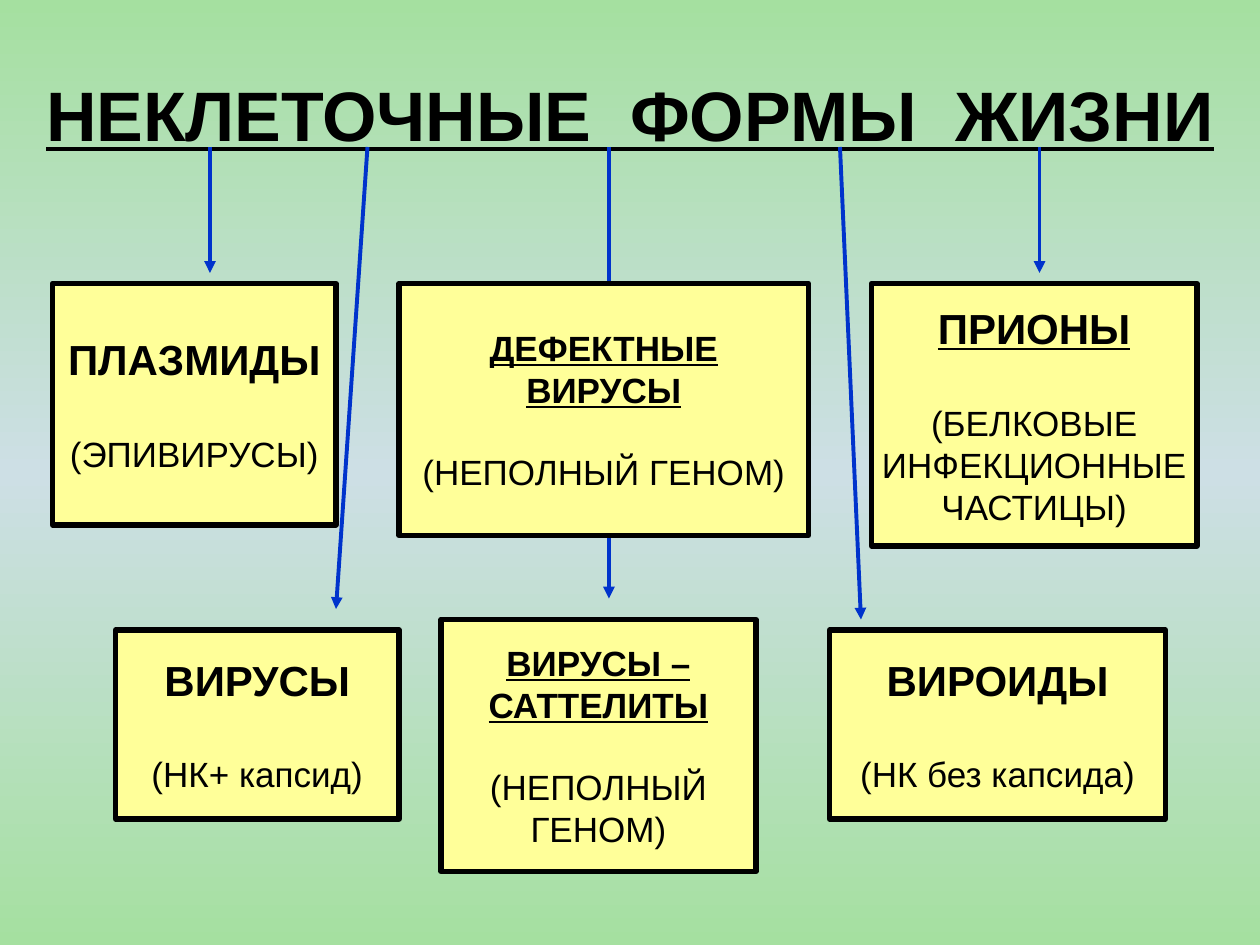
from copy import deepcopy
from typing import NamedTuple

from pptx import Presentation
from pptx.dml.color import RGBColor
from pptx.enum.shapes import MSO_CONNECTOR, MSO_SHAPE
from pptx.enum.text import MSO_ANCHOR, PP_ALIGN
from pptx.oxml.ns import qn
from pptx.oxml.xmlchemy import OxmlElement
from pptx.util import Emu, Pt

PX = 7620  # EMU per px, 120 px to the inch
FONT = "Arial"
BLACK = RGBColor(0x00, 0x00, 0x00)
BLUE = RGBColor(0x00, 0x33, 0xCC)
YELLOW = RGBColor(0xFF, 0xFF, 0x99)
GREEN = RGBColor(0xA5, 0xE0, 0xA0)
PALE_BLUE = RGBColor(0xCD, 0xDF, 0xE5)

ARROW_TOP = 140
NOTE_SIZE = 20


class Box(NamedTuple):
    left: int
    top: int
    width: int
    height: int
    heading: list[str]
    note: list[str]
    size: int = 24
    underline: bool = False


class Arrow(NamedTuple):
    start_x: int
    end_x: int
    end_y: int


BOXES = [
    Box(50, 270, 270, 230, ["ПЛАЗМИДЫ"], ["(ЭПИВИРУСЫ)"]),
    Box(380, 270, 390, 240, ["ДЕФЕКТНЫЕ", "ВИРУСЫ"], ["(НЕПОЛНЫЙ ГЕНОМ)"], 20, True),
    Box(830, 270, 310, 250, ["ПРИОНЫ"],
        ["(БЕЛКОВЫЕ", "ИНФЕКЦИОННЫЕ", "ЧАСТИЦЫ)"], underline=True),
    Box(110, 600, 270, 180, ["ВИРУСЫ"], ["(НК+ капсид)"]),
    Box(420, 590, 300, 240, ["ВИРУСЫ –", "САТТЕЛИТЫ"], ["(НЕПОЛНЫЙ", "ГЕНОМ)"], 20, True),
    Box(790, 600, 320, 180, ["ВИРОИДЫ"], ["(НК без капсида)"]),
]

ARROWS = [
    Arrow(200, 200, 260),
    Arrow(350, 320, 580),
    Arrow(580, 580, 570),
    Arrow(800, 820, 590),
    Arrow(990, 990, 260),
]


def px(*values: int) -> list[Emu]:
    return [Emu(v * PX) for v in values]


def write(p, text: str, *, size: int, bold: bool = False,
          underline: bool = False, before: float = 0) -> None:
    p.alignment = PP_ALIGN.CENTER
    p.space_before = Pt(before)
    r = p.add_run()
    r.text = text
    font = r.font
    font.name, font.size = FONT, Pt(size)
    font.bold, font.underline = bold, underline
    font.color.rgb = BLACK


def paint_background(s) -> None:
    """Fill the slide with a vertical gradient, pale in the middle."""
    fill = s.background.fill
    fill.gradient()
    fill.gradient_angle = 90
    stops = s.element.find(".//" + qn("a:gsLst"))
    stops.append(deepcopy(stops[0]))
    for stop, position, color in zip(
            fill.gradient_stops, (0, 0.5, 1), (GREEN, PALE_BLUE, GREEN)):
        stop.position = position
        stop.color.rgb = color


def draw_title(s, text: str) -> None:
    title = s.shapes.title
    title.left, title.top, title.width, title.height = px(0, 36, 1200, 144)
    tf = title.text_frame
    tf.vertical_anchor = MSO_ANCHOR.MIDDLE
    write(tf.paragraphs[0], text, size=40, bold=True, underline=True)


def draw_arrow(s, arrow: Arrow) -> None:
    line = s.shapes.add_connector(
        MSO_CONNECTOR.STRAIGHT,
        *px(arrow.start_x, ARROW_TOP, arrow.end_x, arrow.end_y))
    line.line.color.rgb = BLUE
    line.line.width = Pt(2.25)
    head = OxmlElement("a:tailEnd")
    head.set("type", "triangle")
    line.line._get_or_add_ln().append(head)
    line._element.spPr.append(OxmlElement("a:effectLst"))


def draw_box(s, box: Box) -> None:
    sp = s.shapes.add_shape(
        MSO_SHAPE.RECTANGLE, *px(box.left, box.top, box.width, box.height))
    sp.shadow.inherit = False
    sp.fill.solid()
    sp.fill.fore_color.rgb = YELLOW
    sp.line.color.rgb = BLACK
    sp.line.width = Pt(3)
    tf = sp.text_frame
    tf.word_wrap = False
    tf.vertical_anchor = MSO_ANCHOR.MIDDLE
    for i, text in enumerate(box.heading):
        p = tf.add_paragraph() if i else tf.paragraphs[0]
        write(p, text, size=box.size, bold=True, underline=box.underline)
    for i, text in enumerate(box.note):
        gap = 0 if i else box.size * 1.15  # one heading line
        write(tf.add_paragraph(), text, size=NOTE_SIZE, before=gap)


def main() -> None:
    prs = Presentation()
    prs.slide_width, prs.slide_height = px(1200, 900)
    s = prs.slides.add_slide(prs.slide_layouts[5])
    paint_background(s)
    draw_title(s, "НЕКЛЕТОЧНЫЕ  ФОРМЫ  ЖИЗНИ")
    for arrow in ARROWS:
        draw_arrow(s, arrow)
    for box in BOXES:
        draw_box(s, box)
    prs.save("out.pptx")


if __name__ == "__main__":
    main()
